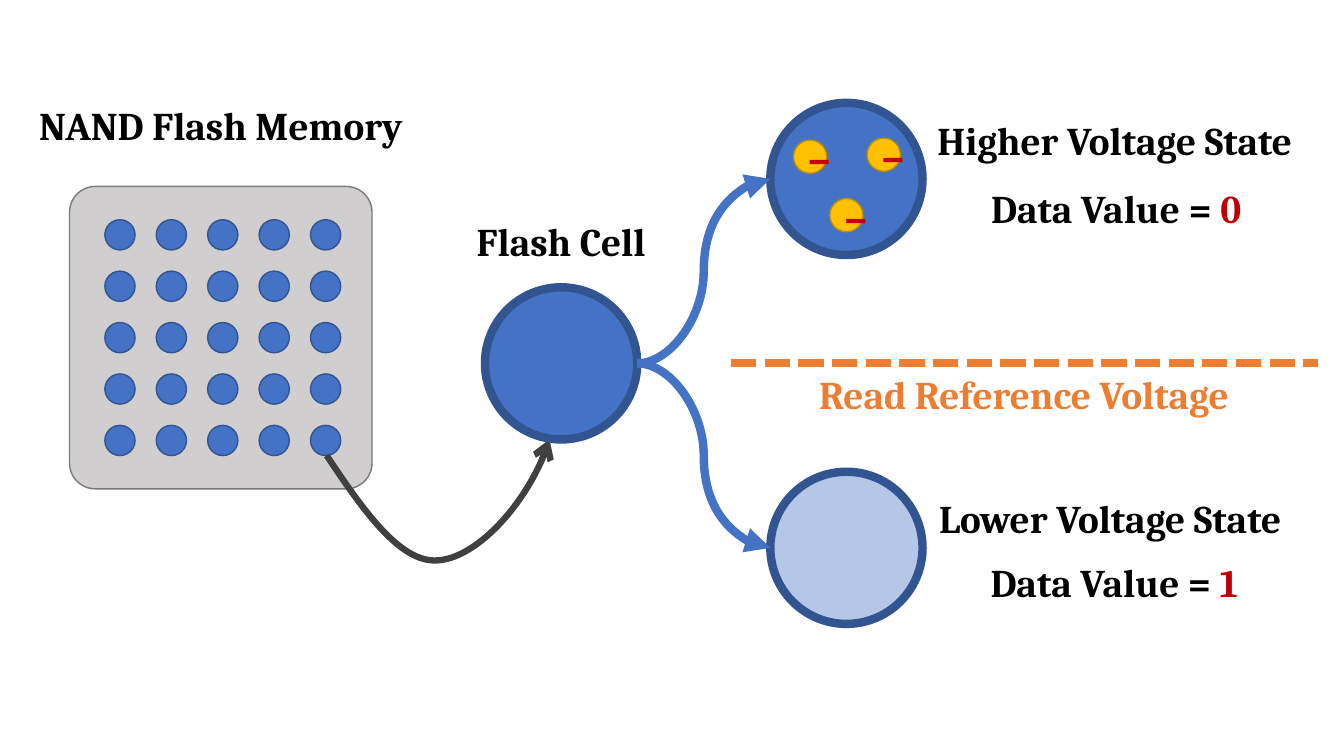
from lxml import etree
from pptx import Presentation
from pptx import util as u
from pptx.dml.color import RGBColor
from pptx.enum import dml, shapes, text
from pptx.oxml.ns import qn

BLUE, NAVY, PALE = "4472C4", "325491", "B4C7E7"
RED, ORANGE, BLACK = "C00000", "ED7D31", "000000"
FONT = "Cambria"

# left, top, width, then the (words, colour) spans
LABELS = [
    (0.23, 0.96, 3.92, [("NAND Flash Memory", BLACK)]),
    (4.59, 2.11, 1.95, [("Flash Cell", BLACK)]),
    (9.15, 1.1, 3.81, [("Higher Voltage State", BLACK)]),
    (9.68, 1.78, 2.78, [("Data Value = ", BLACK), ("0", RED)]),
    (9.15, 4.85, 3.72, [("Lower Voltage State", BLACK)]),
    (9.66, 5.49, 2.78, [("Data Value = ", BLACK), ("1", RED)]),
    (7.91, 3.62, 4.49, [("Read Reference Voltage", ORANGE)]),
]
CHIP = (0.69, 1.85, 3, 3)
GRID_LEFT, GRID_TOP, GRID_STEP, GRID_COUNT, DOT = 1.04, 2.18, 0.51, 5, 0.3
CELL_SIZE = 1.51
FLASH_CELL = (4.81, 2.85)
STATES = [(7.64, 1.02, BLUE), (7.64, 4.68, PALE)]
ELECTRON_SIZE = 0.33
ELECTRONS = [(7.87, 1.39), (8.6, 1.37), (8.23, 1.97)]
REFERENCE = (7.25, 3.6, 13.07, 3.6)
# start, then two handles and an end for each curve
ZOOM_CURVE = [(3.24, 4.52),
              (3.6, 5.06), (3.97, 5.59), (4.34, 5.56),
              (4.7, 5.54), (5.27, 4.96), (5.45, 4.36)]

deck = Presentation()
deck.slide_width, deck.slide_height = u.Inches(13.33), u.Inches(7.5)
page = deck.slides.add_slide(deck.slide_layouts[6])


def inches(*values):
    return [u.Inches(value) for value in values]


def colour(code):
    return RGBColor.from_string(code)


def style_line(line, code, width):
    line.color.rgb = colour(code)
    line.width = u.Pt(width)


def add_arrowhead(shape, kind):
    etree.SubElement(shape.line._get_or_add_ln(), qn("a:tailEnd"), type=kind)


def write(frame, spans, size=28, wrap=False):
    """Fill a frame with one centred bold line of (words, colour) spans."""
    frame.word_wrap = wrap
    para = frame.paragraphs[0]
    para.alignment = text.PP_ALIGN.CENTER
    for words, code in spans:
        span = para.add_run()
        span.text = words
        span.font.name, span.font.size, span.font.bold = FONT, u.Pt(size), True
        span.font.color.rgb = colour(code)


def add_label(left, top, width, spans):
    box = page.shapes.add_textbox(*inches(left, top, width, 0.57))
    write(box.text_frame, spans)
    box.text_frame.auto_size = text.MSO_AUTO_SIZE.SHAPE_TO_FIT_TEXT


def add_filled(kind, place, fill, edge, edge_width=1):
    shape = page.shapes.add_shape(kind, *inches(*place))
    shape.shadow.inherit = False
    shape.fill.solid()
    shape.fill.fore_color.rgb = colour(fill)
    style_line(shape.line, edge, edge_width)
    return shape


def add_circle(left, top, size, fill, edge=NAVY, edge_width=1):
    return add_filled(shapes.MSO_SHAPE.OVAL, (left, top, size, size), fill, edge, edge_width)


def add_link(kind, ends, code):
    link = page.shapes.add_connector(kind, *inches(*ends))
    style_line(link.line, code, 6)
    etree.SubElement(link._element.spPr, qn("a:effectLst"))
    return link


def add_bezier(points, code, width):
    """Draw an open outline whose points after the first come in threes."""
    builder = page.shapes.build_freeform(*inches(*points[0]), scale=1.0)
    builder.add_line_segments([inches(*point) for point in points[1:]], close=False)
    curve = builder.convert_to_shape()
    segments = list(curve._element.iter(qn("a:lnTo")))
    for first in range(0, len(segments), 3):
        bend = etree.Element(qn("a:cubicBezTo"))
        segments[first].addprevious(bend)
        for segment in segments[first:first + 3]:
            bend.append(segment[0])
            segment.getparent().remove(segment)
    curve.shadow.inherit = False
    curve.fill.background()
    style_line(curve.line, code, width)
    return curve


chip = add_filled(shapes.MSO_SHAPE.ROUNDED_RECTANGLE, CHIP, "D0CECE", "7A7A7A")
chip.adjustments[0] = 0.085
for row in range(GRID_COUNT):
    for column in range(GRID_COUNT):
        add_circle(GRID_LEFT + column * GRID_STEP, GRID_TOP + row * GRID_STEP, DOT, BLUE)

add_arrowhead(add_bezier(ZOOM_CURVE, "404040", 4.5), "arrow")
add_circle(*FLASH_CELL, CELL_SIZE, BLUE, edge_width=6)
for left, top, fill in STATES:
    add_circle(left, top, CELL_SIZE, fill, edge_width=6)

for left, top in ELECTRONS:
    electron = add_circle(left, top, ELECTRON_SIZE, "FFC000", edge="BD8E00")
    write(electron.text_frame, [("–", RED)], size=32, wrap=True)
    electron.text_frame.vertical_anchor = text.MSO_ANCHOR.MIDDLE

for label in LABELS:
    add_label(*label)

cell_left, cell_top = FLASH_CELL
for left, top, fill in STATES:
    ends = (cell_left + CELL_SIZE, cell_top + CELL_SIZE / 2, left, top + CELL_SIZE / 2)
    add_arrowhead(add_link(shapes.MSO_CONNECTOR.CURVE, ends, BLUE), "triangle")

reference = add_link(shapes.MSO_CONNECTOR.STRAIGHT, REFERENCE, ORANGE)
reference.line.dash_style = dml.MSO_LINE.SQUARE_DOT
reference.line._get_or_add_ln().find(qn("a:prstDash")).set("val", "sysDash")

deck.save("out.pptx")
